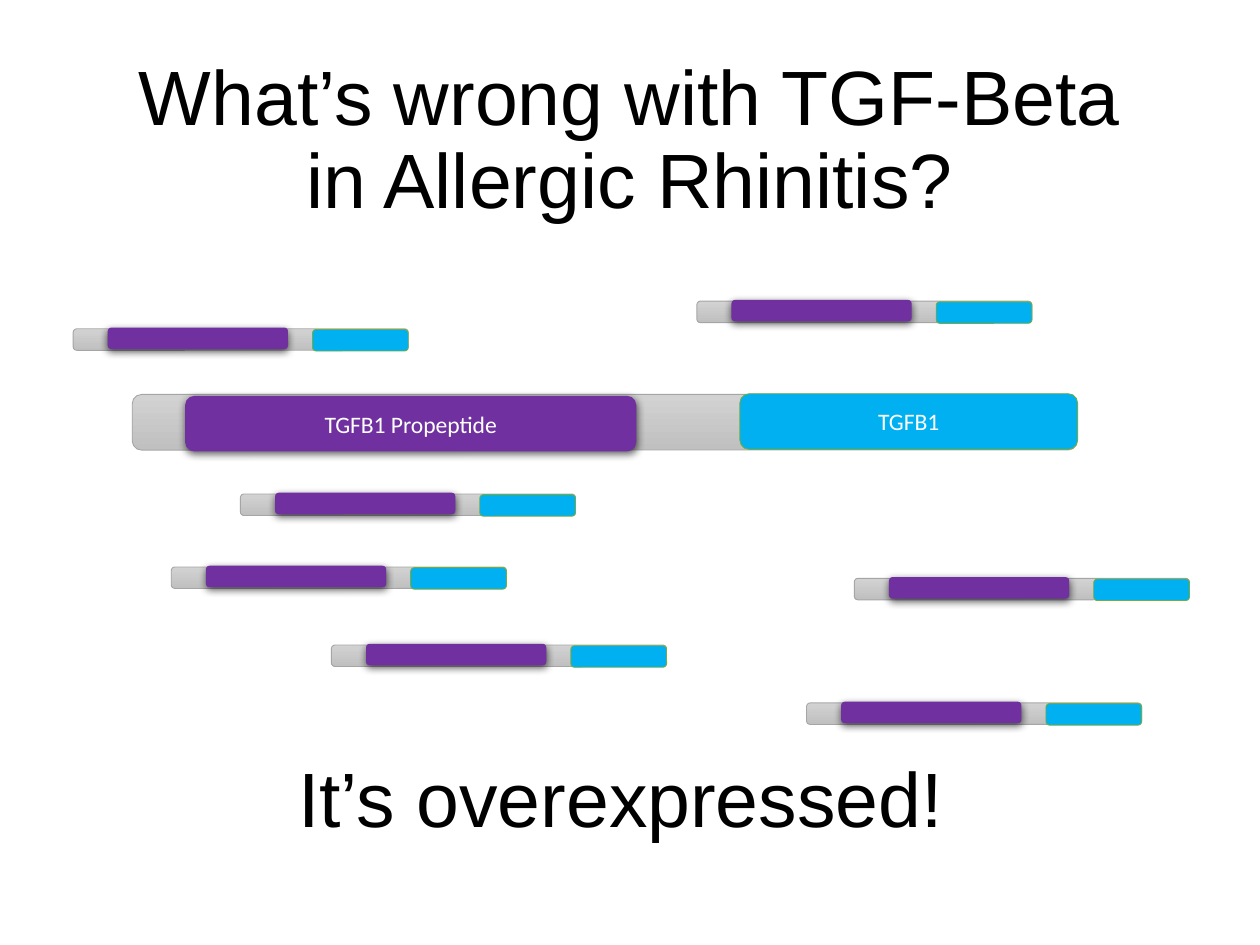
from lxml.etree import SubElement as Sub
from pptx import Presentation
from pptx.dml.color import RGBColor as RGB
from pptx.enum.shapes import MSO_SHAPE as Shape
from pptx.enum.text import MSO_ANCHOR as Anchor, MSO_AUTO_SIZE as Fit, PP_ALIGN as Align
from pptx.oxml.ns import qn
from pptx.util import Pt

BLACK, WHITE = RGB(0, 0, 0), RGB(255, 255, 255)
LIGHT, DARK, GRAY = RGB(0xD2, 0xD2, 0xD2), RGB(0xC0, 0xC0, 0xC0), RGB(0xA5, 0xA5, 0xA5)
PURPLE, BLUE, GREEN = RGB(0x70, 0x30, 0xA0), RGB(0, 0xB0, 0xF0), RGB(0x70, 0xAD, 0x47)

# Each part of a protein: x offset, y offset, width
BIG = ((0, 0, 540), (30.2, 0.8, 257.8), (347.2, -0.4, 193))
SMALL = ((0, 0, 191.5), (19.8, -0.7, 103), (136.8, 0.4, 54.7))

# Left and top of the small proteins
SPOTS = ((97.9, 324), (398.2, 172.1), (189.4, 368.6), (41.8, 187.9),
         (488.2, 330.5), (137.4, 282.3), (460.9, 401.7))


def style(frame, text, size, font, color, align):
    frame.text = text
    para = frame.paragraphs[0]
    para.alignment = align
    face = para.runs[0].font
    face.size, face.name, face.color.rgb = Pt(size), font, color
    return para


def add_bar(slide, x, y, wide, high, fill=None, line=None):
    bar = slide.shapes.add_shape(Shape.ROUNDED_RECTANGLE, Pt(x), Pt(y), Pt(wide), Pt(high))
    bar.shadow.inherit = False
    if fill is None:
        bar.fill.gradient()
        bar.fill.gradient_angle = 270
        for stop, color in zip(bar.fill.gradient_stops, (LIGHT, DARK)):
            stop.color.rgb = color
    else:
        bar.fill.solid()
        bar.fill.fore_color.rgb = fill
    if line is None:
        bar.line.fill.background()
    else:
        bar.line.color.rgb = line
        bar.line.width = Pt(0.5)
    return bar


def add_shade(bar):
    effects = bar._element.spPr.find(qn("a:effectLst"))
    shade = Sub(effects, qn("a:outerShdw"), blurRad=str(Pt(4.5)), dist=str(Pt(1.5)),
                dir="5400000", algn="ctr", rotWithShape="0")
    color = Sub(shade, qn("a:srgbClr"), val=str(BLACK))
    Sub(color, qn("a:alpha"), val="63000")


def add_label(bar, text):
    frame = bar.text_frame
    frame.margin_left = frame.margin_right = Pt(5)
    frame.margin_top = frame.margin_bottom = Pt(3)
    frame.vertical_anchor = Anchor.MIDDLE
    style(frame, text, 13.5, "Calibri", WHITE, Align.CENTER)


def add_protein(slide, x, y, high, parts):
    looks = ((None, GRAY), (PURPLE, None), (BLUE, GREEN))
    bars = [add_bar(slide, x + dx, y + dy, wide, high, *look)
            for (dx, dy, wide), look in zip(parts, looks)]
    add_shade(bars[1])
    return bars


def add_title(slide, text):
    title = slide.shapes.title
    title.left, title.top, title.width, title.height = Pt(49.5), Pt(28.75), Pt(621), Pt(104.4)
    frame = title.text_frame
    para = style(frame, text, 44, "Arial", BLACK, Align.CENTER)
    para.line_spacing = 0.9
    frame.vertical_anchor = Anchor.MIDDLE
    frame.auto_size = Fit.NONE


def add_answer(slide, text):
    box = slide.shapes.add_textbox(Pt(163.4), Pt(425.5), Pt(393.1), Pt(60.5))
    frame = box.text_frame
    frame.word_wrap = True
    frame.auto_size = Fit.SHAPE_TO_FIT_TEXT
    style(frame, text, 44, "Arial", BLACK, Align.LEFT)


def main():
    deck = Presentation()
    deck.slide_width, deck.slide_height = Pt(720), Pt(540)
    slide = deck.slides.add_slide(deck.slide_layouts[5])
    add_title(slide, "What’s wrong with TGF-Beta in Allergic Rhinitis?")

    # Labelled protein
    _, left, right = add_protein(slide, 75.6, 225.4, 31.8, BIG)
    add_label(left, "TGFB1 Propeptide")
    add_label(right, "TGFB1")

    # Scattered small copies
    for x, y in SPOTS:
        add_protein(slide, x, y, 12.3, SMALL)

    add_answer(slide, "It’s overexpressed!")
    deck.save("out.pptx")


if __name__ == "__main__":
    main()
